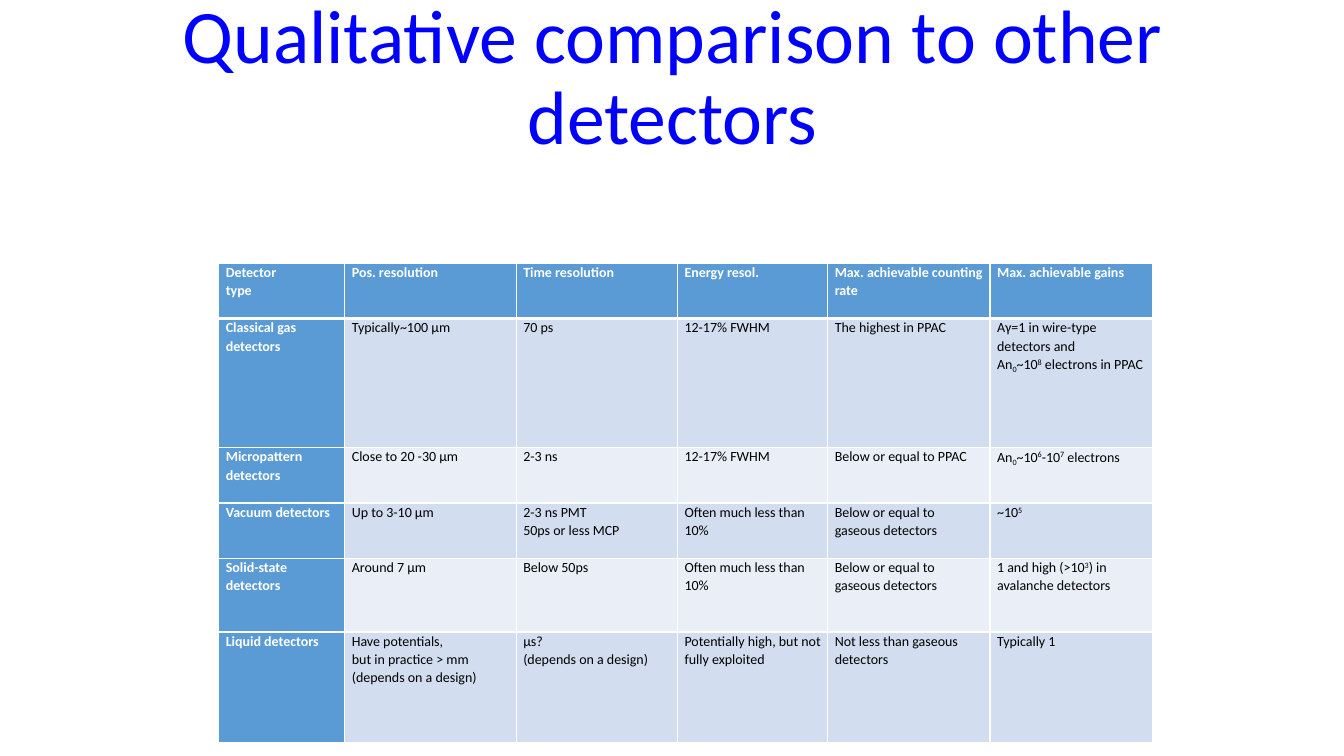
from dataclasses import dataclass

from lxml.etree import SubElement
from pptx import Presentation
from pptx.dml.color import RGBColor
from pptx.enum.text import MSO_ANCHOR, MSO_AUTO_SIZE, PP_ALIGN
from pptx.oxml.ns import qn
from pptx.slide import Slide
from pptx.table import _Cell
from pptx.text.text import _Paragraph
from pptx.util import Inches, Pt

FONT = "Calibri"
COLORS = {
    "title": "0000FF",
    "heading": "5B9BD5",
    "heading_text": "FFFFFF",
    "body_text": "000000",
    "band_dark": "D2DEEF",
    "band_light": "EAEFF7",
    "grid": "FFFFFF",
}
COLUMN_WIDTHS = [1.25, 1.7, 1.6, 1.49, 1.61, 1.61]
# Baseline shift, in thousandths of a percent, for pieces starting with a mark
BASELINES = {"_": "-25000", "^": "30000"}


@dataclass
class DetectorRow:
    """One table row; "|" separates pieces, "^" raises and "_" lowers one."""
    height: float
    texts: list[str]


ROWS = [
    DetectorRow(0.55, ["Detector\ntype", "Pos. resolution", "Time resolution", "Energy resol.",
                       "Max. achievable counting rate", "Max. achievable gains"]),
    DetectorRow(1.28, ["Classical gas\ndetectors", "Typically~100 µm", "70 ps", "12-17% FWHM",
                       "The highest in PPAC",
                       "Aγ=1 in wire-type detectors and\nAn|_0|~10|^8| electrons in PPAC"]),
    DetectorRow(0.55, ["Micropattern detectors", "Close to 20 -30 µm", "2-3 ns", "12-17% FWHM",
                       "Below or equal to PPAC", "An|_0|~10|^6|-10|^7| electrons"]),
    DetectorRow(0.55, ["Vacuum detectors", "Up to 3-10 µm", "2-3 ns PMT\n50ps or less MCP",
                       "Often much less than 10%", "Below or equal to gaseous detectors",
                       "~10|^5"]),
    DetectorRow(0.73, ["Solid-state detectors", "Around 7 µm", "Below 50ps",
                       "Often much less than 10%", "Below or equal to gaseous detectors",
                       "1 and high (>10|^3|) in avalanche detectors"]),
    DetectorRow(1.1, ["Liquid detectors",
                      "Have potentials,\nbut in practice > mm\n(depends on a design)",
                      "µs?\n(depends on a design)", "Potentially high, but not fully exploited",
                      "Not less than gaseous detectors", "Typically 1"]),
]


def rgb(name: str) -> RGBColor:
    return RGBColor.from_string(COLORS[name])


def add_title(slide: Slide, wording: str) -> None:
    title = slide.shapes.title
    title.left, title.top = Inches(1.67), Inches(0.41)
    title.width, title.height = Inches(10), Inches(1.24)
    frame = title.text_frame
    frame.text = wording
    frame.word_wrap = True
    frame.auto_size = MSO_AUTO_SIZE.NONE
    frame.vertical_anchor = MSO_ANCHOR.BOTTOM
    line = frame.paragraphs[0]
    line.alignment = PP_ALIGN.CENTER
    line.line_spacing = 0.9
    font = line.runs[0].font
    font.name, font.size = FONT, Pt(54)
    font.color.rgb = rgb("title")


def write_line(paragraph: _Paragraph, wording: str, heading: bool) -> None:
    paragraph.line_spacing = 1.07
    for piece in wording.split("|"):
        run = paragraph.add_run()
        run.text = piece.lstrip("_^")
        font = run.font
        font.name, font.size, font.bold = FONT, Pt(10), heading
        font.color.rgb = rgb("heading_text" if heading else "body_text")
        if piece[0] in BASELINES:
            run._r.get_or_add_rPr().set("baseline", BASELINES[piece[0]])


def add_borders(cell: _Cell, top: float, bottom: float) -> None:
    properties = cell._tc.get_or_add_tcPr()
    for side, width in {"L": 1, "R": 1, "T": top, "B": bottom}.items():
        border = SubElement(properties, qn(f"a:ln{side}"), w=str(Pt(width)))
        fill = SubElement(border, qn("a:solidFill"))
        SubElement(fill, qn("a:srgbClr"), val=COLORS["grid"])


def fill_cell(cell: _Cell, wording: str, row: int, column: int) -> None:
    heading = row == 0 or column == 0
    cell.margin_left = cell.margin_right = Inches(0.07)
    cell.margin_top = cell.margin_bottom = 0
    frame = cell.text_frame
    for index, line in enumerate(wording.split("\n")):
        paragraph = frame.add_paragraph() if index else frame.paragraphs[0]
        write_line(paragraph, line, heading)
    # A thick rule separates the header from the first detector
    add_borders(cell, top=3 if row == 1 else 1, bottom=3 if row == 0 else 1)
    band = "band_dark" if row % 2 else "band_light"
    cell.fill.solid()
    cell.fill.fore_color.rgb = rgb("heading" if heading else band)


def add_comparison(slide: Slide, rows: list[DetectorRow]) -> None:
    height = sum(row.height for row in rows)
    table = slide.shapes.add_table(
        len(rows), len(COLUMN_WIDTHS), Inches(2.17), Inches(2.61),
        Inches(sum(COLUMN_WIDTHS)), Inches(height)).table
    for column, width in zip(table.columns, COLUMN_WIDTHS):
        column.width = Inches(width)
    for r, row in enumerate(rows):
        table.rows[r].height = Inches(row.height)
        for c, wording in enumerate(row.texts):
            fill_cell(table.cell(r, c), wording, r, c)


def main() -> None:
    presentation = Presentation()
    presentation.slide_width, presentation.slide_height = Inches(13.33), Inches(7.5)
    # Title-only layout
    slide = presentation.slides.add_slide(presentation.slide_layouts[5])
    add_title(slide, "Qualitative comparison to other detectors")
    add_comparison(slide, ROWS)
    presentation.save("out.pptx")


if __name__ == "__main__":
    main()
